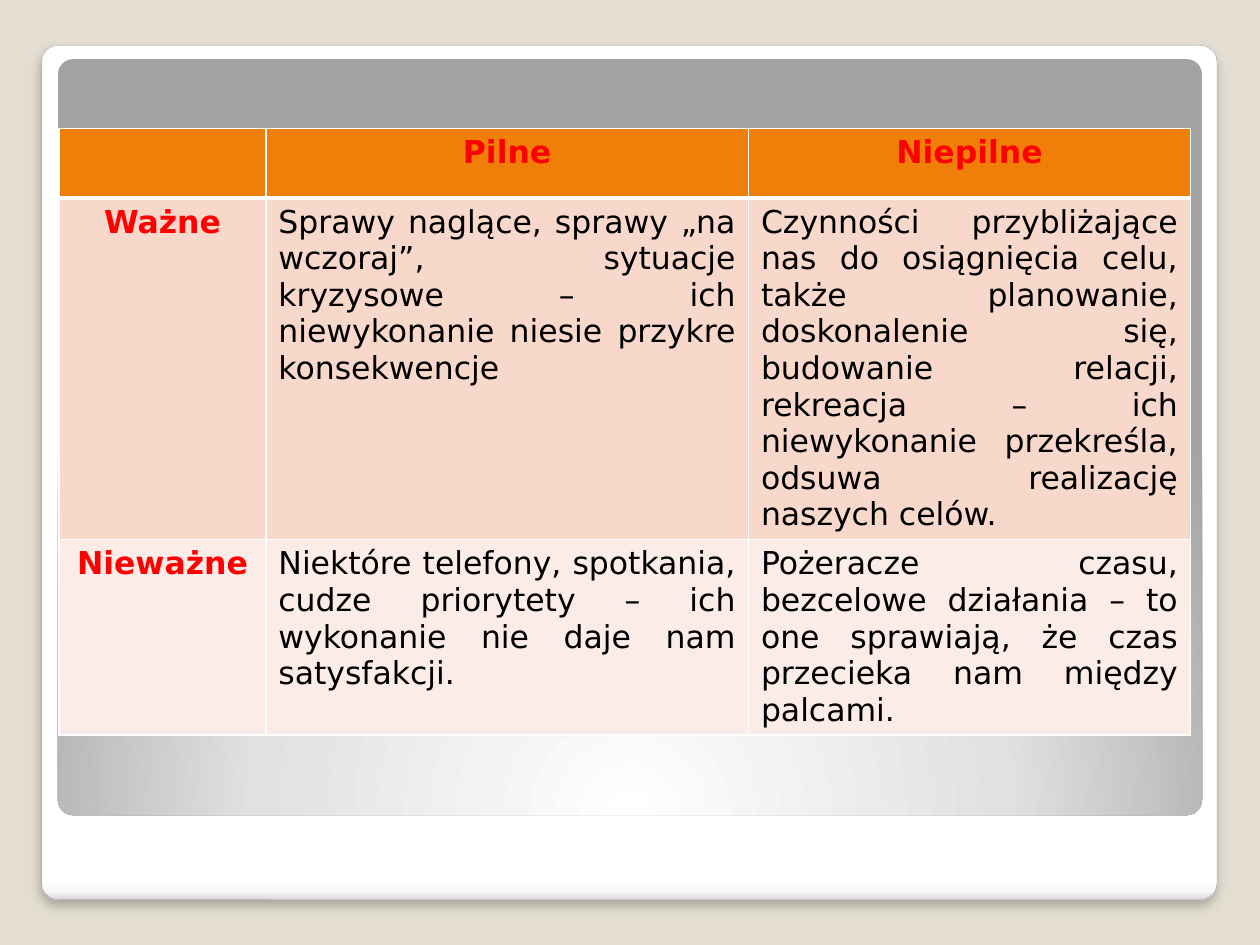
import pptx
import pptx.util
import pptx.oxml
import pptx.oxml.ns
from lxml import etree
from pptx.dml.color import RGBColor
from pptx.enum.shapes import MSO_SHAPE
from pptx.enum.text import PP_ALIGN
from pptx.util import Inches

SAND = RGBColor(0xE3, 0xDE, 0xD1)
GREY = RGBColor(0xA4, 0xA4, 0xA4)
WHITE = RGBColor(0xFF, 0xFF, 0xFF)
BLACK = RGBColor(0, 0, 0)
RED = RGBColor(0xFF, 0, 0)
ORANGE = RGBColor(0xF0, 0x7F, 0x09)
PINK = RGBColor(0xF9, 0xD8, 0xCC)
PALE = RGBColor(0xFC, 0xEC, 0xE7)

FONT = "DejaVu Sans"
COLS = [1.64, 3.83, 3.51]
ROWS = [0.55, 2.71, 1.55]
FILLS = [ORANGE, PINK, PALE]
CELLS = [
    ["", "Pilne", "Niepilne"],
    ["Ważne",
     "Sprawy naglące, sprawy „na wczoraj”, sytuacje kryzysowe – ich "
     "niewykonanie niesie przykre konsekwencje",
     "Czynności przybliżające nas do osiągnięcia celu, także planowanie, "
     "doskonalenie się, budowanie relacji, rekreacja – ich niewykonanie "
     "przekreśla, odsuwa realizację naszych celów."],
    ["Nieważne",
     "Niektóre telefony, spotkania, cudze priorytety – ich wykonanie nie "
     "daje nam satysfakcji.",
     "Pożeracze czasu, bezcelowe działania – to one sprawiają, że czas "
     "przecieka nam między palcami."],
]

FRAME_STOPS = [(0, "FFFFFF"), (98, "FFFFFF"), (99, "F7F7F7"), (100, "DADADA")]
PANEL_STOPS = [(0, "FFFFFF"), (55, "E1E1E1"), (100, "A2A2A2")]
LINEAR = '<a:lin ang="5400000" scaled="0"/>'
RADIAL = ('<a:path path="circle"><a:fillToRect l="50000" t="175000" '
          'r="50000" b="-75000"/></a:path>')


def node(xml):
    """Parse one DrawingML element, adding the namespace to its tag."""
    tag, rest = xml.split(" ", 1)
    return pptx.oxml.parse_xml(f"{tag} {pptx.oxml.ns.nsdecls('a')} {rest}")


def add_card(slide, box, stops, shade):
    card = slide.shapes.add_shape(
        MSO_SHAPE.ROUNDED_RECTANGLE, *[Inches(n) for n in box])
    card.adjustments[0] = 0.02
    card.shadow.inherit = False
    card.line.fill.background()
    marks = "".join(f'<a:gs pos="{pos * 1000}"><a:srgbClr val="{tone}"/></a:gs>'
                    for pos, tone in stops)
    card.fill.background()
    props = card.fill._xPr
    blank = props.find(pptx.oxml.ns.qn("a:noFill"))
    props.replace(blank, node(
        f'<a:gradFill rotWithShape="1"><a:gsLst>{marks}</a:gsLst>{shade}</a:gradFill>'))
    return card


def add_shadow(card):
    effects = card.fill._xPr.find(pptx.oxml.ns.qn("a:effectLst"))
    effects.append(node(
        '<a:outerShdw blurRad="76200" dist="50800" dir="5400000" rotWithShape="0">'
        '<a:srgbClr val="000000"><a:alpha val="25000"/></a:srgbClr></a:outerShdw>'))


def set_edges(cell, widths):
    """Draw white borders; widths maps a side letter to points."""
    props = cell._tc.get_or_add_tcPr()
    for spot, side in enumerate("LRTB"):
        width = pptx.util.Pt(widths.get(side, 1))
        props.insert(spot, node(
            f'<a:ln{side} w="{width}"><a:solidFill><a:srgbClr val="{WHITE}"/>'
            f'</a:solidFill></a:ln{side}>'))


def fill_cell(cell, text, fill, head):
    cell.fill.solid()
    cell.fill.fore_color.rgb = fill
    cell.text_frame.text = text
    para = cell.text_frame.paragraphs[0]
    para.alignment = PP_ALIGN.CENTER if head else PP_ALIGN.JUSTIFY
    for run in para.runs:
        run.font.name = FONT
        run.font.size = pptx.util.Pt(18)
        run.font.bold = head
        run.font.color.rgb = RED if head else BLACK


def add_grid(slide):
    grid = slide.shapes.add_table(
        len(ROWS), len(COLS), Inches(0.47), Inches(1.02),
        Inches(sum(COLS)), Inches(sum(ROWS))).table
    for col, width in zip(grid.columns, COLS):
        col.width = Inches(width)
    for row, height in zip(grid.rows, ROWS):
        row.height = Inches(height)
    for r, texts in enumerate(CELLS):
        for c, text in enumerate(texts):
            cell = grid.cell(r, c)
            fill_cell(cell, text, FILLS[r], r == 0 or c == 0)
            set_edges(cell, {0: {"B": 3}, 1: {"T": 3}}.get(r, {}))


def main():
    deck = pptx.Presentation()
    deck.slide_width, deck.slide_height = Inches(10), Inches(7.5)
    slide = deck.slides.add_slide(deck.slide_layouts[6])
    slide.background.fill.solid()
    slide.background.fill.fore_color.rgb = SAND
    frame = add_card(slide, (0.33, 0.36, 9.33, 6.78), FRAME_STOPS, LINEAR)
    frame.line.color.rgb = GREY
    frame.line.width = pptx.util.Pt(0.16)
    add_shadow(frame)
    add_card(slide, (0.46, 0.47, 9.08, 6), PANEL_STOPS, RADIAL)
    add_grid(slide)
    deck.save("out.pptx")


if __name__ == "__main__":
    main()
